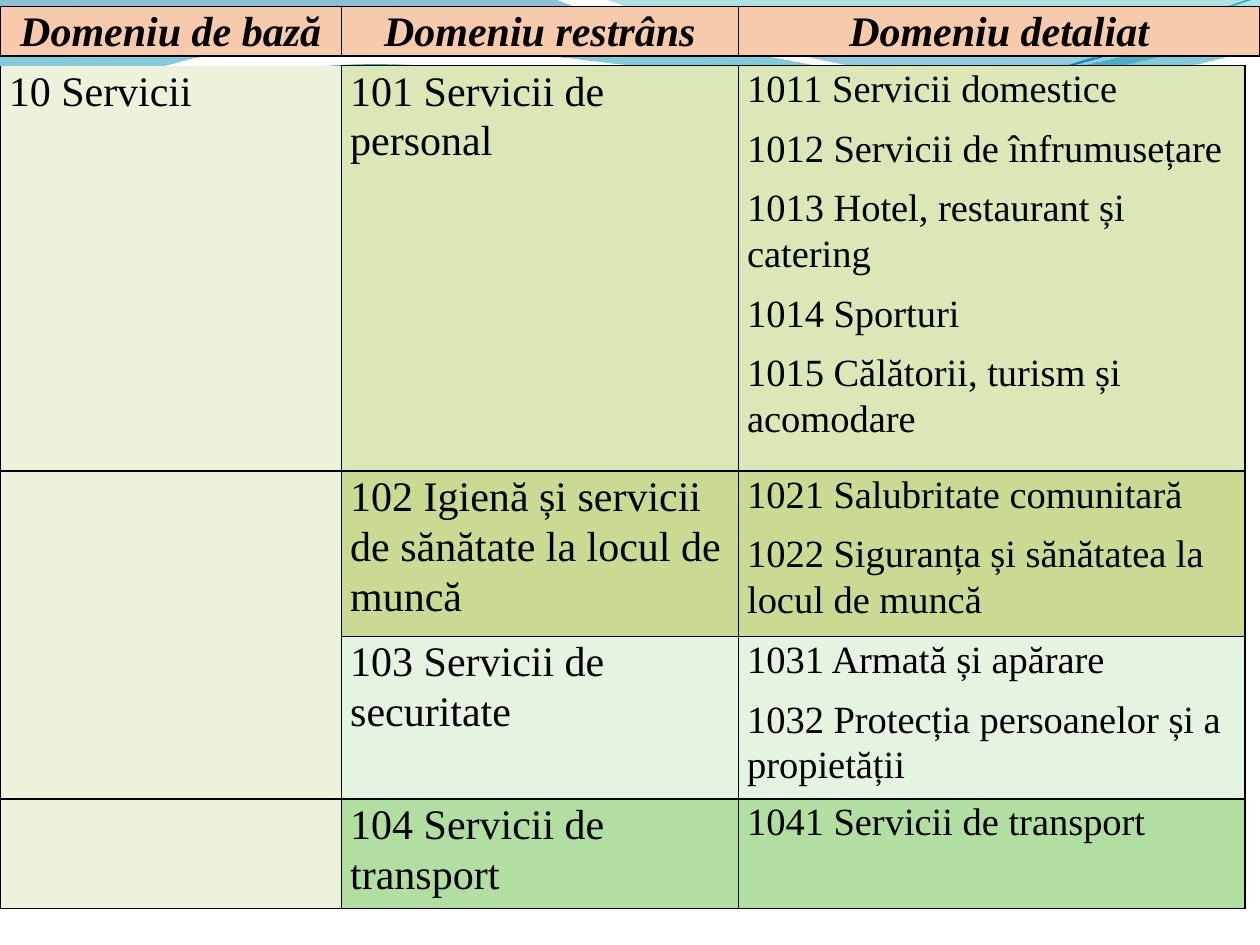
import math
import pptx
import pptx.dml.color
import pptx.enum.text
import pptx.oxml
import pptx.oxml.ns
import pptx.util
from dataclasses import dataclass
from lxml import etree

Inches, Pt = pptx.util.Inches, pptx.util.Pt
RGB = pptx.dml.color.RGBColor.from_string
qn = pptx.oxml.ns.qn
ALIGN = pptx.enum.text.PP_ALIGN


@dataclass(frozen=True)
class Theme:
    font: str = "Times New Roman"
    text: str = "000000"
    border: str = "000000"
    header: str = "F7CAAC"
    base: str = "EDF3DB"
    large: int = 24
    small: int = 22
    border_pt: float = 1


THEME = Theme()
WAVE_TURN = 357.3

# Each wave: frame, start point, then curves (6 numbers) and straight lines (2 numbers)
WAVE_BANDS = [
    ((-0.01, -0.01, 10.02, 1.14), (0, 0),
     [(4.4, -0.01), (4.76, 0.17, 6.64, 0.63, 7.58, 0.63),
      (8.53, 0.63, 9.58, 0.26, 10, 0.09), (10.01, 0.36),
      (9.83, 0.44, 8.7, 0.76, 7.46, 0.75),
      (6.22, 0.75, 3.82, 0.28, 2.57, 0.34),
      (1.29, 0.36, 0.46, 0.83, -0.01, 1.13), (0, 0)],
     [(0, "0074A1", 45), (1, "00C6CF", 55)]),
    ((4.79, -0.01, 5.21, 0.7), (4.79, -0.01),
     [(5.09, 0.11, 6.82, 0.62, 7.69, 0.65),
      (8.56, 0.69, 9.61, 0.32, 10, 0.21), (10, 0), (4.79, -0.01)],
     [(0, "00A1A9", 30), (0.8, "008BBF", 45)]),
]
WAVE_LINES = [
    ((-0.02, 0.22, 10.02, 0.71), (0, 1.11),
     [(0.48, 0.93, 1.58, 0.57, 2.77, 0.52),
      (3.95, 0.47, 5.93, 0.89, 7.13, 0.8),
      (8.33, 0.71, 9.38, 0.15, 9.98, -0.02)], "0AB8BF", 0.85),
    ((-0.02, 0.3, 10.03, 0.58), (0, 1.04),
     [(0.47, 0.96, 1.64, 0.61, 2.83, 0.56),
      (4.03, 0.51, 5.97, 0.84, 7.17, 0.75),
      (8.36, 0.67, 9.41, 0.21, 10, 0.06)], "0F6FC6", 0.75),
]

HEADERS = ["Domeniu de bază", "Domeniu restrâns", "Domeniu detaliat"]
# Row height, base domain, its edges, narrow domain, detailed domains, fill
ROWS = [
    (3.22, "10 Servicii", "LRB", "101 Servicii de personal",
     ["1011 Servicii domestice", "1012 Servicii de înfrumusețare",
      "1013 Hotel, restaurant și catering", "1014 Sporturi",
      "1015 Călătorii, turism și acomodare"], "DBE7B6"),
    (1.31, "", "LRT", "102 Igienă și servicii de sănătate la locul de muncă",
     ["1021 Salubritate comunitară",
      "1022 Siguranța și sănătatea la locul de muncă"], "C9DA92"),
    (1.29, "", "LRB", "103 Servicii de securitate",
     ["1031 Armată și apărare",
      "1032 Protecția persoanelor și a propietății"], "E5F4E0"),
    (0.87, "", "LRTB", "104 Servicii de transport",
     ["1041 Servicii de transport"], "B0DFA1"),
]


def set_all(obj, values):
    for name, value in values.items():
        setattr(obj, name, value)


def add_wave(slide, frame, start, segments, close, turn=0):
    """Draw a curved outline whose points are given as seen on the slide."""
    left, top, width, height = frame
    angle = math.radians(-turn)
    cx, cy = left + width / 2, top + height / 2

    def local(x, y):
        dx, dy = x - cx, y - cy
        return (Inches(dx * math.cos(angle) - dy * math.sin(angle) + width / 2),
                Inches(dx * math.sin(angle) + dy * math.cos(angle) + height / 2))

    builder = slide.shapes.build_freeform(*local(*start))
    builder.add_line_segments([local(*seg[-2:]) for seg in segments], close=close)
    sp = builder.convert_to_shape()
    sp.shadow.inherit = False
    set_all(sp, dict(zip(("left", "top", "width", "height"), map(Inches, frame))))
    sp.rotation = turn

    # Rewrite the steps in frame coordinates, with true curves
    outline = next(sp._element.iter(qn("a:path")))
    outline.set("w", str(Inches(width)))
    outline.set("h", str(Inches(height)))
    for step, seg in zip(list(outline), [start, *segments]):
        if len(seg) == 6:
            step_tag = "a:cubicBezTo"
        else:
            step_tag = "a:moveTo" if seg is start else "a:lnTo"
        new = etree.Element(qn(step_tag))
        for i in range(0, len(seg), 2):
            x, y = local(*seg[i:i + 2])
            etree.SubElement(new, qn("a:pt"), x=str(x), y=str(y))
        outline.replace(step, new)
    return sp


def add_band(slide, frame, start, segments, stops):
    sp = add_wave(slide, frame, start, segments, True)
    sp.line.fill.background()
    sp.fill.gradient()
    sp.fill.gradient_angle = 270
    for stop, (position, color, _) in zip(sp.fill.gradient_stops, stops):
        stop.position = position
        stop.color.rgb = RGB(color)
    # Opacity of the gradient stops
    for clr, (_, _, opacity) in zip(sp._element.spPr.iter(qn("a:srgbClr")), stops):
        etree.SubElement(clr, qn("a:alpha"), val=str(opacity * 1000))


def add_wave_line(slide, frame, start, segments, color, width):
    sp = add_wave(slide, frame, start, segments, False, WAVE_TURN)
    sp.fill.background()
    sp.line.color.rgb = RGB(color)
    sp.line.width = Pt(width)


def set_borders(cell, edges):
    tcPr = cell._tc.get_or_add_tcPr()
    for edge in "LRTB":
        fill = (f'<a:solidFill><a:srgbClr val="{THEME.border}"/></a:solidFill>'
                if edge in edges else "<a:noFill/>")
        tcPr.append(pptx.oxml.parse_xml(
            f'<a:ln{edge} {pptx.oxml.ns.nsdecls("a")} w="{Pt(THEME.border_pt)}">'
            f'{fill}</a:ln{edge}>'))


def fill_cell(cell, lines, fill, size, edges="LRTB", align=ALIGN.LEFT, **style):
    set_all(cell, {"margin_left": Inches(0.07), "margin_right": Inches(0.07),
                   "margin_top": 0, "margin_bottom": 0})
    set_borders(cell, edges)
    cell.fill.solid()
    cell.fill.fore_color.rgb = RGB(fill)
    tf = cell.text_frame
    for i, line in enumerate(lines):
        p = tf.add_paragraph() if i else tf.paragraphs[0]
        set_all(p, {"alignment": align, "line_spacing": 1.07, "space_after": Pt(8)})
        r = p.add_run()
        r.text = line
        set_all(r.font, {"name": THEME.font, "size": Pt(size), **style})
        r.font.color.rgb = RGB(THEME.text)


def add_grid(slide, top, widths, heights):
    frame = slide.shapes.add_table(len(heights), len(widths), 0, Inches(top),
                                   Inches(sum(widths)), Inches(sum(heights)))
    table = frame.table
    set_all(table, {"first_row": False, "horz_banding": False})
    for column, width in zip(table.columns, widths):
        column.width = Inches(width)
    for row, height in zip(table.rows, heights):
        row.height = Inches(height)
    return table


def main():
    prs = pptx.Presentation()
    set_all(prs, {"slide_width": Inches(10), "slide_height": Inches(7.5)})
    s = prs.slides.add_slide(prs.slide_layouts[6])

    # Waves along the top
    for band in WAVE_BANDS:
        add_band(s, *band)
    for line in WAVE_LINES:
        add_wave_line(s, *line)

    # Heading table
    heading = add_grid(s, 0.05, [2.71, 3.15, 4.14], [0.37])
    for cell, title in zip(heading.rows[0].cells, HEADERS):
        fill_cell(cell, [title], THEME.header, THEME.large,
                  align=ALIGN.CENTER, bold=True, italic=True)

    # Domain table
    domains = add_grid(s, 0.52, [2.71, 3.15, 4.02], [row[0] for row in ROWS])
    for row, (_, base, edges, narrow, details, fill) in zip(domains.rows, ROWS):
        first, second, third = row.cells
        fill_cell(first, [base] if base else [], THEME.base, THEME.large, edges)
        fill_cell(second, [narrow], fill, THEME.large)
        fill_cell(third, details, fill, THEME.small)

    prs.save("out.pptx")


if __name__ == "__main__":
    main()
